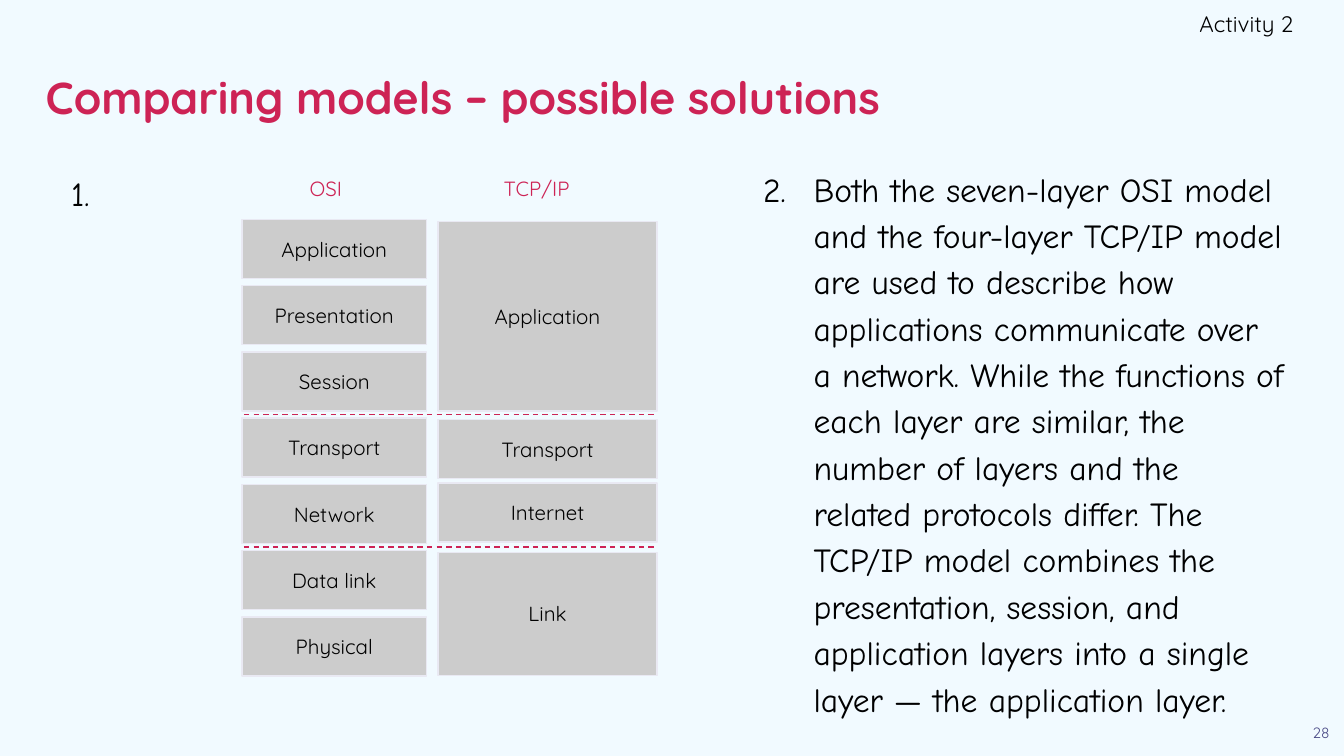
"""Build a slide comparing the layers of the OSI and TCP/IP models."""
from dataclasses import dataclass

from lxml.etree import SubElement
from pptx import Presentation
from pptx.dml.color import RGBColor
from pptx.enum.dml import MSO_LINE
from pptx.enum.shapes import MSO_CONNECTOR, MSO_SHAPE
from pptx.enum.text import MSO_ANCHOR, MSO_AUTO_SIZE, PP_ALIGN
from pptx.oxml.ns import qn
from pptx.util import Pt

PX = 4572


@dataclass(frozen=True)
class Theme:
    background: RGBColor = RGBColor.from_string("F1FAFF")
    accent: RGBColor = RGBColor.from_string("CD2355")
    ink: RGBColor = RGBColor.from_string("000000")
    number: RGBColor = RGBColor.from_string("494985")
    box: RGBColor = RGBColor.from_string("CCCCCC")
    border: RGBColor = RGBColor.from_string("E9E9F3")
    heading_font: str = "Quicksand"
    body_font: str = "Comic Neue"
    title_size: int = 24
    body_size: int = 18
    tag_size: int = 12
    label_size: int = 11
    number_size: int = 8
    line_width: float = 0.75


theme = Theme()


def write(sp, text, size, color=theme.ink, font=theme.heading_font,
          align=PP_ALIGN.LEFT, anchor=MSO_ANCHOR.TOP, bold=False):
    tf = sp.text_frame
    tf.text = text
    tf.word_wrap = True
    tf.auto_size = MSO_AUTO_SIZE.NONE
    tf.vertical_anchor = anchor
    tf.margin_left = tf.margin_right = tf.margin_top = tf.margin_bottom = 20 * PX
    p = tf.paragraphs[0]
    p.alignment = align
    r = p.runs[0]
    r.font.size = Pt(size)
    r.font.name = font
    r.font.bold = bold
    r.font.color.rgb = color


def add_text(x, y, w, h, *args, **kwargs):
    sp = s.shapes.add_textbox(x * PX, y * PX, w * PX, h * PX)
    write(sp, *args, **kwargs)
    return sp


prs = Presentation()
prs.slide_width, prs.slide_height = 2000 * PX, 1125 * PX
s = prs.slides.add_slide(prs.slide_layouts[5])
s.background.fill.solid()
s.background.fill.fore_color.rgb = theme.background

title = s.shapes.title
title.left, title.top, title.width, title.height = 48 * PX, 66 * PX, 1864 * PX, 156 * PX
write(title, "Comparing models – possible solutions", theme.title_size,
      theme.accent, anchor=MSO_ANCHOR.MIDDLE, bold=True)

tag = add_text(1497, 0, 428, 69, "Activity 2", theme.tag_size,
               align=PP_ALIGN.RIGHT, anchor=MSO_ANCHOR.MIDDLE)
tag.text_frame.margin_right = 0
add_text(1932, 1057, 68, 68, "28", theme.number_size, theme.number, align=PP_ALIGN.CENTER)
add_text(86, 238, 524, 100, "1.", theme.body_size, font=theme.body_font)

answer = add_text(
    1091, 222, 842, 834,
    "Both the seven-layer OSI model and the four-layer TCP/IP model are used to "
    "describe how applications communicate over a network. While the functions of "
    "each layer are similar, the number of layers and the related protocols differ. "
    "The TCP/IP model combines the presentation, session, and application layers "
    "into a single layer — the application layer.",
    theme.body_size, font=theme.body_font)
p = answer.text_frame.paragraphs[0]
p.line_spacing = 1.15
pPr = p._p.get_or_add_pPr()
pPr.set("marL", str(100 * PX))
pPr.set("indent", str(-75 * PX))
SubElement(pPr, qn("a:buFont"), typeface=theme.body_font)
SubElement(pPr, qn("a:buAutoNum"), type="arabicPeriod", startAt="2")

for name, x, w in [("OSI", 441, 120), ("TCP/IP", 730, 172)]:
    label = add_text(x, 236, w, 78, name, theme.label_size, theme.accent)
    p = label.text_frame.paragraphs[0]
    p.line_spacing = 1.15
    p.space_after = Pt(16)

osi_names = ["Application", "Presentation", "Session", "Transport",
             "Network", "Data link", "Physical"]
layers = [(name, 360, 327 + 591 * i // 6, 275, 88) for i, name in enumerate(osi_names)]
layers += [(name, 652, y, 326, h) for name, y, h in [
    ("Application", 330, 282), ("Transport", 624, 88),
    ("Internet", 719, 88), ("Link", 822, 183)]]
for name, x, y, w, h in layers:
    sp = s.shapes.add_shape(MSO_SHAPE.RECTANGLE, x * PX, y * PX, w * PX, h * PX)
    sp.shadow.inherit = False
    sp.fill.solid()
    sp.fill.fore_color.rgb = theme.box
    sp.line.color.rgb = theme.border
    sp.line.width = Pt(theme.line_width)
    write(sp, name, theme.label_size, align=PP_ALIGN.CENTER, anchor=MSO_ANCHOR.MIDDLE)

for y in (617, 814):
    divider = s.shapes.add_connector(MSO_CONNECTOR.STRAIGHT, 363 * PX, y * PX, 978 * PX, y * PX)
    divider.line.color.rgb = theme.accent
    divider.line.width = Pt(theme.line_width)
    divider.line.dash_style = MSO_LINE.DASH
    SubElement(divider._element.spPr, qn("a:effectLst"))

prs.save("out.pptx")
